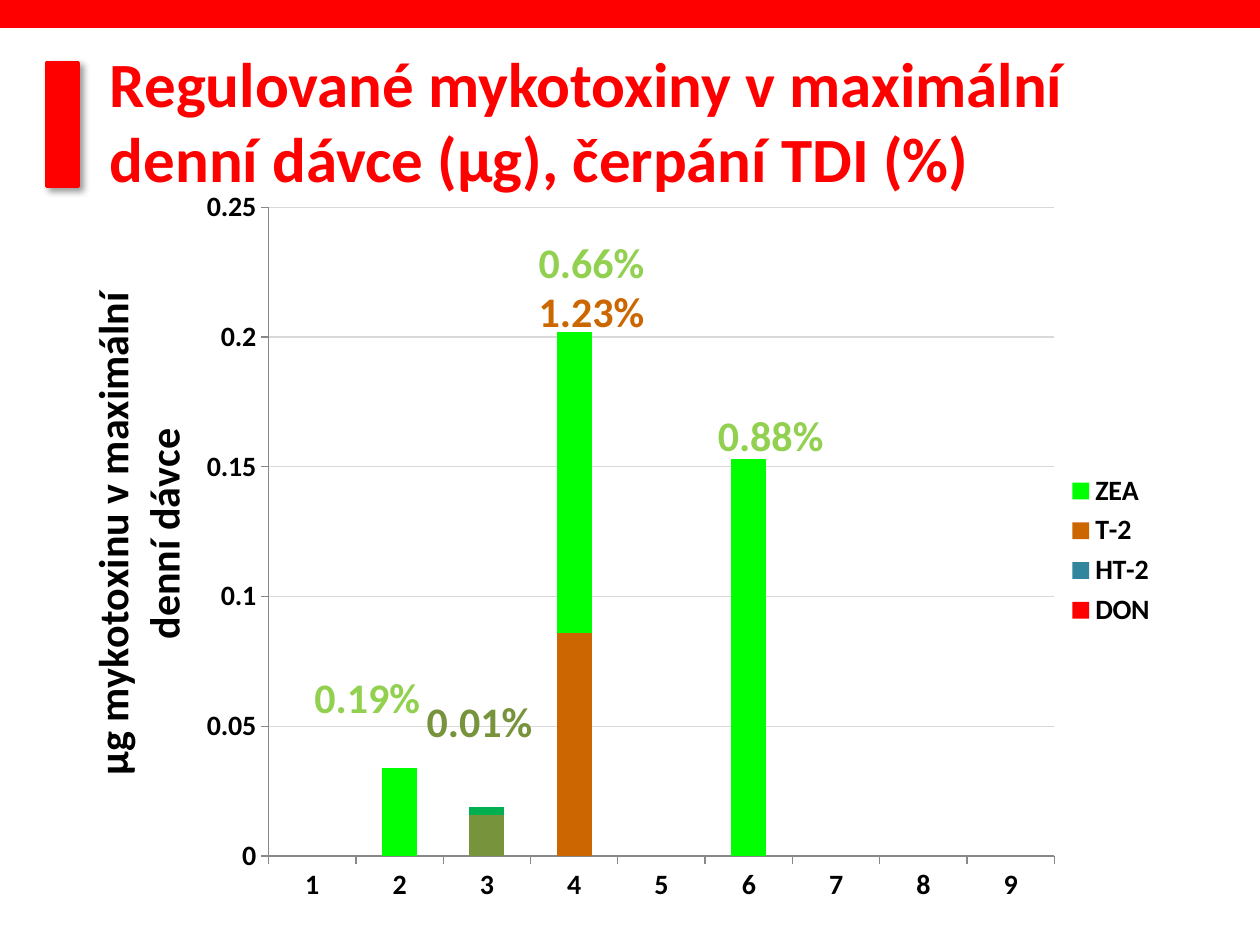
from lxml import etree
from pptx import Presentation
from pptx.chart.data import CategoryChartData
from pptx.dml.color import RGBColor
from pptx.enum import chart as charts, shapes, text
from pptx.oxml import ns, parse_xml
from pptx.util import Cm, Pt

COLOURS = {
    "red": "FF0000", "teal": "31859C", "orange": "CC6600", "lime": "00FF00",
    "olive": "77933C", "green": "00B050", "light_green": "92D050",
    "grid": "D9D9D9", "axis": "888888", "black": "000000",
}
FONT = "Calibri"

# Name, colour, and values by category
SERIES = [
    ("DON", "red", {}),
    ("HT-2", "teal", {}),
    ("T-2", "orange", {4: 0.086}),
    ("ZEA", "lime", {2: 0.034, 4: 0.116, 6: 0.153}),
    ("Series 5", "olive", {3: 0.016}),
    ("Series 6", "green", {3: 0.003}),
]
HIDDEN_LEGEND_ENTRIES = (4, 5)

# Share of TDI, colour, and left and top within the chart's box in cm
SHARES = [
    ("1.23%", "orange", 8.89, 1.98),
    ("0.19%", "light_green", 4.37, 9.75),
    ("0.66%", "light_green", 8.89, 0.99),
    ("0.88%", "light_green", 12.5, 4.47),
    ("0.01%", "olive", 6.63, 10.24),
]


def rgb(name):
    return RGBColor.from_string(COLOURS[name])


def format_font(font, size, colour="black"):
    values = {"name": FONT, "size": Pt(size), "bold": True}
    for attribute, value in values.items():
        setattr(font, attribute, value)
    font.color.rgb = rgb(colour)


def fill_text(shape, words, size, colour, alignment):
    frame = shape.text_frame
    values = {
        "text": words, "word_wrap": True,
        "vertical_anchor": text.MSO_ANCHOR.TOP,
        "auto_size": text.MSO_AUTO_SIZE.SHAPE_TO_FIT_TEXT,
    }
    for attribute, value in values.items():
        setattr(frame, attribute, value)
    paragraph = frame.paragraphs[0]
    paragraph.alignment = alignment
    format_font(paragraph.runs[0].font, size, colour)


def add_red_bar(slide, left, top, width, height):
    shape = slide.shapes.add_shape(
        shapes.MSO_SHAPE.RECTANGLE, left, top, width, height)
    shape.shadow.inherit = False
    shape.fill.solid()
    shape.fill.fore_color.rgb = rgb("red")
    shape.line.color.rgb = rgb("red")
    shape.line.width = Pt(2)
    return shape


def add_shadow(shape):
    effects = shape._element.spPr.find(ns.qn("a:effectLst"))
    effects.append(parse_xml(
        f'<a:outerShdw {ns.nsdecls("a")} blurRad="{Pt(4)}" dist="{Pt(3)}" '
        f'dir="{45 * 60000}" rotWithShape="0"><a:srgbClr val="{COLOURS["black"]}">'
        '<a:alpha val="40000"/></a:srgbClr></a:outerShdw>'))


def add_header(slide, left, top, width, height):
    # Marker beside the title, and the band across the top
    marker = add_red_bar(slide, left + Cm(0.94), top + Cm(1.27), Cm(0.64), Cm(2.49))
    add_shadow(marker)
    add_red_bar(slide, left, top, width, Cm(0.53))

    # Title
    title = slide.shapes.title
    box = {"left": left + Cm(1.96), "top": top + Cm(0.76),
           "width": Cm(22.43), "height": height - Cm(0.76)}
    for attribute, value in box.items():
        setattr(title, attribute, value)
    fill_text(title, "Regulované mykotoxiny v maximální denní dávce (µg), "
              "čerpání TDI (%)", 36, "red", text.PP_ALIGN.LEFT)


def manual_layout(**values):
    layout = etree.Element(ns.qn("c:layout"))
    manual = etree.SubElement(layout, ns.qn("c:manualLayout"))
    for tag, value in values.items():
        etree.SubElement(manual, ns.qn(f"c:{tag}")).set("val", str(value))
    return layout


def set_plot_layout(chart):
    area = chart._chartSpace.chart.plotArea
    for old in area.findall(ns.qn("c:layout")):
        area.remove(old)
    area.insert(0, manual_layout(
        layoutTarget="inner", xMode="edge", yMode="edge",
        x=0.184, y=0.035, w=0.712, h=0.879))


def format_legend(chart):
    chart.has_legend = True
    legend = chart.legend
    legend.position = charts.XL_LEGEND_POSITION.RIGHT
    legend.include_in_layout = False
    format_font(legend.font, 16)
    for place, index in enumerate(HIDDEN_LEGEND_ENTRIES, start=1):
        entry = etree.Element(ns.qn("c:legendEntry"))
        etree.SubElement(entry, ns.qn("c:idx")).set("val", str(index))
        etree.SubElement(entry, ns.qn("c:delete")).set("val", "1")
        legend._element.insert(place, entry)


def format_axes(chart):
    for axis in (chart.category_axis, chart.value_axis):
        axis.major_tick_mark = charts.XL_TICK_MARK.OUTSIDE
        axis.minor_tick_mark = charts.XL_TICK_MARK.NONE
        axis.format.line.color.rgb = rgb("axis")
        axis.format.line.width = Pt(0.75)
        format_font(axis.tick_labels.font, 16)

    values = chart.value_axis
    values.minimum_scale, values.maximum_scale, values.major_unit = 0, 0.25, 0.05
    values.has_major_gridlines = True
    values.major_gridlines.format.line.color.rgb = rgb("grid")
    values.major_gridlines.format.line.width = Pt(0.75)
    frame = values.axis_title.text_frame
    frame.text = "µg mykotoxinu v maximální denní dávce"
    format_font(frame.paragraphs[0].runs[0].font, 24)
    title = values.axis_title._element
    for old in title.findall(ns.qn("c:layout")):
        title.remove(old)
    title.insert(1, manual_layout(xMode="edge", yMode="edge", x=0.01, y=0.14))


def add_toxin_chart(slide, left, top, width, height):
    categories = range(1, 10)
    data = CategoryChartData()
    data.categories = [str(category) for category in categories]
    for name, _, values in SERIES:
        data.add_series(name, [values.get(category) for category in categories])
    chart = slide.shapes.add_chart(
        charts.XL_CHART_TYPE.COLUMN_STACKED, left, top, width, height, data).chart
    chart.has_title = False
    chart.font.name, chart.font.size = FONT, Pt(10)

    plot = chart.plots[0]
    plot.gap_width, plot.overlap, plot.vary_by_categories = 150, 100, False
    for series, (_, colour, _) in zip(plot.series, SERIES):
        series.format.fill.solid()
        series.format.fill.fore_color.rgb = rgb(colour)
    format_axes(chart)
    format_legend(chart)
    set_plot_layout(chart)

    # Shares of TDI above the columns
    for words, colour, x, y in SHARES:
        label = slide.shapes.add_textbox(
            left + Cm(x), top + Cm(y), Cm(3.43), Cm(1.27))
        fill_text(label, words, 24, colour, text.PP_ALIGN.CENTER)


def main():
    presentation = Presentation()
    presentation.slide_width, presentation.slide_height = Cm(25.4), Cm(19.05)
    slide = presentation.slides.add_slide(presentation.slide_layouts[5])
    add_header(slide, 0, 0, presentation.slide_width, Cm(4.09))
    add_toxin_chart(slide, Cm(1.32), Cm(3.66), Cm(22.25), Cm(14.88))
    presentation.save("out.pptx")


if __name__ == "__main__":
    main()
